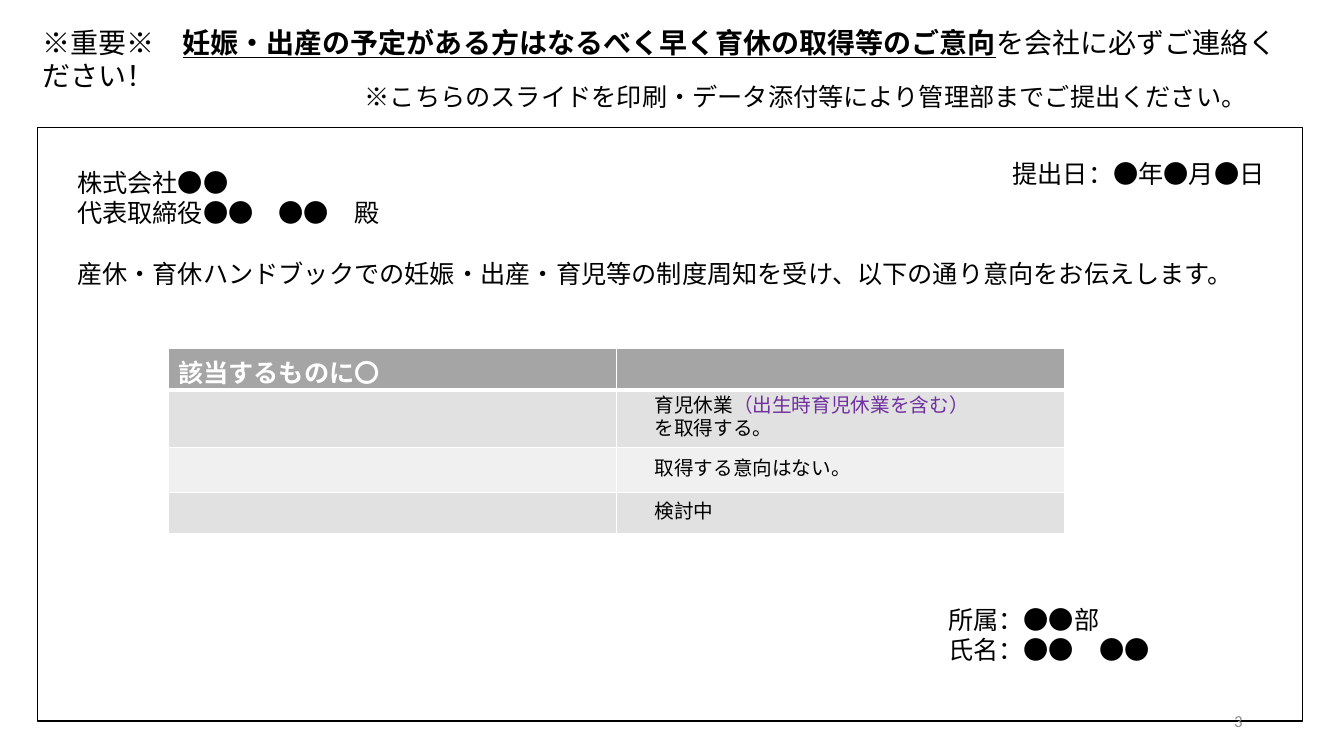
from dataclasses import dataclass

from lxml.etree import SubElement
from pptx import Presentation
from pptx.dml.color import RGBColor
from pptx.enum.shapes import MSO_SHAPE as Shape
from pptx.enum.text import MSO_ANCHOR as Anchor, PP_ALIGN as Align
from pptx.oxml.ns import qn
from pptx.util import Inches, Pt


@dataclass(frozen=True)
class Theme:
    ink: str = "000000"
    white: str = "FFFFFF"
    header: str = "A5A5A5"
    bands: tuple = ("E1E1E1", "F0F0F0")
    accent: str = "7030A0"
    muted: str = "8C8C8C"
    body: str = "Calibri"
    title: str = "Noto Sans CJK JP"
    serif: str = "TeX Gyre Schola"
    title_size: int = 20
    body_size: int = 18
    cell_size: int = 14
    small_size: int = 12


class Form:
    """Places elements by shares of the slide's width and height."""

    def __init__(self, prs, theme):
        self.theme = theme
        self.size = prs.slide_width, prs.slide_height
        self.slide = prs.slides.add_slide(prs.slide_layouts[6])

    def box(self, *shares):
        return [int(share * self.size[i % 2]) for i, share in enumerate(shares)]

    def runs(self, p, parts, **style):
        """Each part is a text or a (text, format) pair."""
        base = dict(size=self.theme.body_size, name=self.theme.body, color=self.theme.ink)
        for part in parts:
            text, extra = (part, {}) if isinstance(part, str) else part
            r = p.add_run()
            r.text = text
            for key, value in {**base, **style, **extra}.items():
                if key == "color":
                    r.font.color.rgb = RGBColor.from_string(value)
                elif key == "ea":
                    SubElement(r._r.get_or_add_rPr(), qn("a:ea"), typeface=value)
                else:
                    setattr(r.font, key, Pt(value) if key == "size" else value)

    def paragraphs(self, tf, lines, layout, **style):
        for i, parts in enumerate(lines):
            p = tf.add_paragraph() if i else tf.paragraphs[0]
            for key, value in layout.items():
                setattr(p, key, value)
            self.runs(p, parts, **style)
        return tf

    def text(self, shares, lines, wrap=False, anchor=Anchor.TOP, align=Align.LEFT, **style):
        tf = self.slide.shapes.add_textbox(*self.box(*shares)).text_frame
        tf.word_wrap, tf.vertical_anchor = wrap, anchor
        return self.paragraphs(tf, lines, {"alignment": align}, **style)

    def frame(self, shares):
        sp = self.slide.shapes.add_shape(Shape.RECTANGLE, *self.box(*shares))
        sp.shadow.inherit = False
        sp.fill.background()
        sp.line.color.rgb = RGBColor.from_string(self.theme.ink)
        sp.line.width = Pt(1)

    def cell(self, cell, fill, bottom=1):
        pr = cell._tc.get_or_add_tcPr()
        for side in "LRTB":
            width = bottom if side == "B" else 1
            ln = SubElement(pr, qn(f"a:ln{side}"), w=str(Pt(width)))
            SubElement(SubElement(ln, qn("a:solidFill")), qn("a:srgbClr"), val=self.theme.white)
        cell.fill.solid()
        cell.fill.fore_color.rgb = RGBColor.from_string(fill)

    def choices(self, shares, heights, heading, options):
        th = self.theme
        table = self.slide.shapes.add_table(len(heights), 2, *self.box(*shares)).table
        for row, height in zip(table.rows, heights):
            row.height = Inches(height)
        for c in range(2):
            self.cell(table.cell(0, c), th.header, bottom=3)
        self.paragraphs(table.cell(0, 0).text_frame, [[heading]], {}, color=th.white, bold=True)
        margins = dict(margin_left=Inches(0.07), margin_right=Inches(0.07),
                       margin_top=0, margin_bottom=0, vertical_anchor=Anchor.MIDDLE)
        layout = dict(alignment=Align.JUSTIFY, line_spacing=Pt(16))
        for i, lines in enumerate(options):
            for c in range(2):
                self.cell(table.cell(i + 1, c), th.bands[i % 2])
            option = table.cell(i + 1, 1)
            for key, value in margins.items():
                setattr(option, key, value)
            tf = self.paragraphs(option.text_frame, lines, layout,
                                 size=th.cell_size, name=th.serif, bold=False)
            for p in tf.paragraphs:
                p._p.get_or_add_pPr().set("indent", str(Inches(0.31)))


def main():
    prs = Presentation()
    prs.slide_width, prs.slide_height = Inches(13.33), Inches(7.5)
    th = Theme()
    form = Form(prs, th)

    # Notice above the form
    form.text((0.024, 0.027, 0.953, 0.059), [[
        "※重要※　",
        ("妊娠・出産の予定がある方はなるべく早く育休の取得等のご意向", dict(bold=True, underline=True)),
        "を会社に必ずご連絡ください！",
    ]], wrap=True, size=th.title_size, name=th.title, ea=th.title)

    # Answer table
    form.choices((0.125, 0.461, 0.667, 0.245), (0.41, 0.57, 0.45, 0.41), "該当するものに〇", [
        [["育児休業", ("（出生時育児休業を含む）", dict(color=th.accent))], ["を取得する。　　"]],
        [["取得する意向はない。"]],
        [["検討中"]],
    ])

    # Addressee and statement
    tf = form.text((0.05, 0.215, 0.886, 0.175), [
        ["株式会社●●　"],
        ["代表取締役●●　●●　殿"],
        ["産休・育休ハンドブックでの妊娠・出産・育児等の制度周知を受け、以下の通り意向をお伝えします。"],
    ])
    tf.paragraphs[-1].space_before = Pt(22)

    # Form border
    form.frame((0.028, 0.169, 0.941, 0.785))

    # Date, signature, instruction
    form.text((0.746, 0.203, 0.205, 0.053), [["提出日：●年●月●日"]])
    form.text((0.698, 0.793, 0.167, 0.095), [["所属：●●部"], ["氏名：●●　●●"]])
    form.text((0.264, 0.101, 0.725, 0.053),
              [["※こちらのスライドを印刷・データ添付等により管理部までご提出ください。"]], wrap=True)

    # Page number
    form.text((0.707, 0.927, 0.225, 0.053), [["3"]], wrap=True, anchor=Anchor.MIDDLE,
              align=Align.RIGHT, size=th.small_size, color=th.muted)

    prs.save("out.pptx")


if __name__ == "__main__":
    main()
